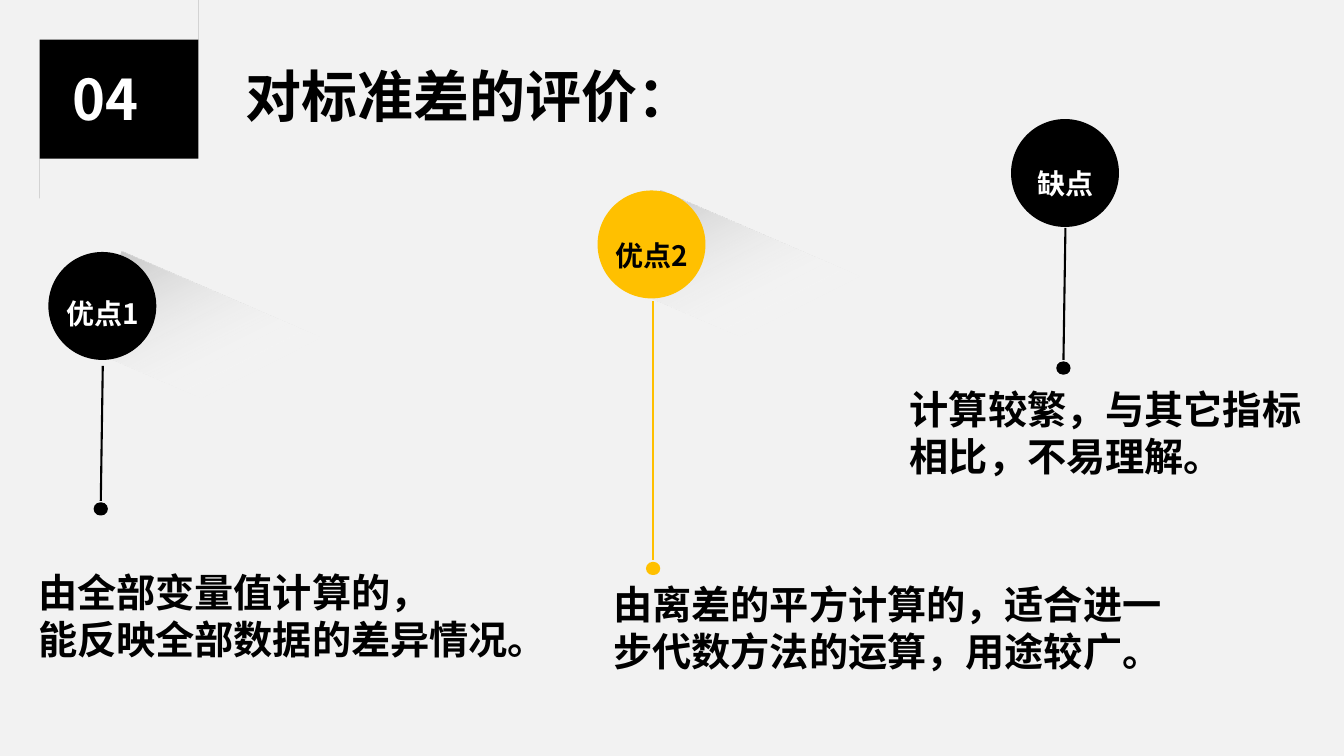
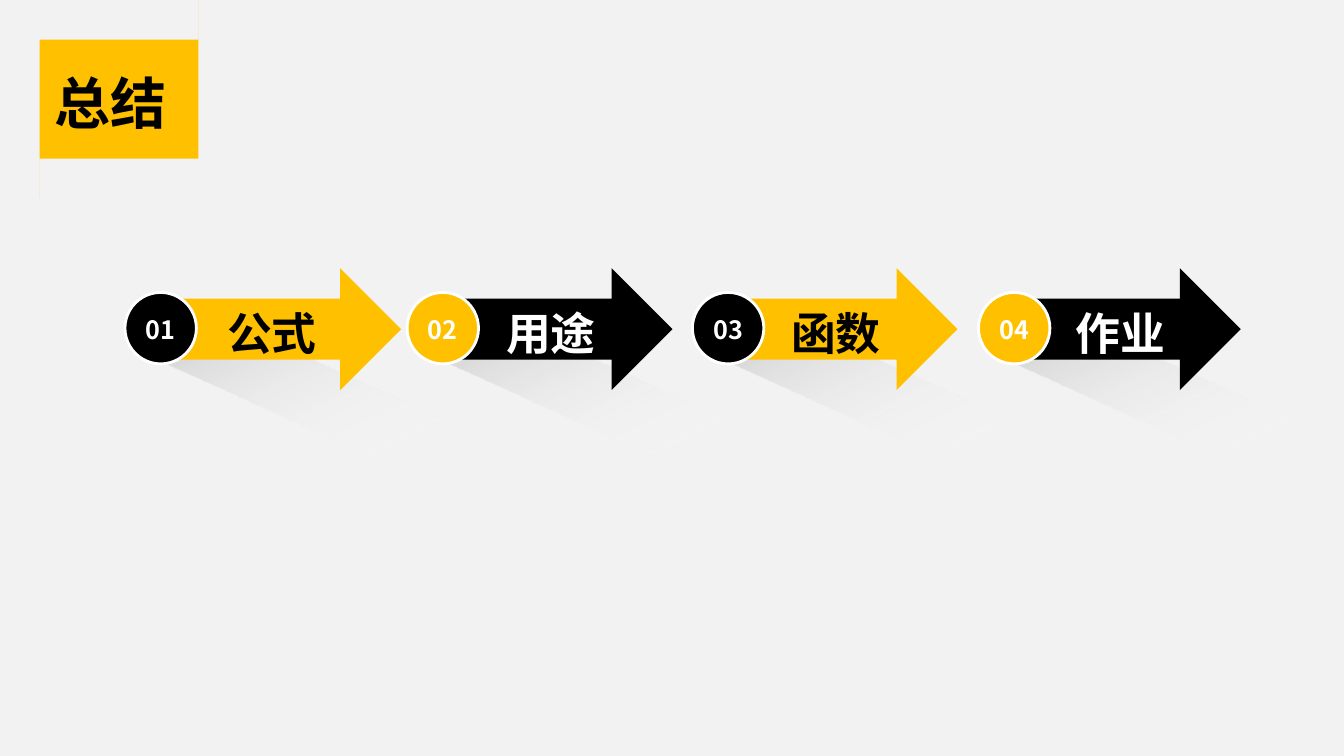
"""Build two slides: the evaluation of the standard deviation, and the summary."""
import dataclasses

import lxml.etree
import pptx
import pptx.dml.color
import pptx.enum.shapes
import pptx.enum.text
import pptx.oxml.ns
import pptx.util

Cm = pptx.util.Cm
Pt = pptx.util.Pt
RGBColor = pptx.dml.color.RGBColor
SHAPE = pptx.enum.shapes.MSO_SHAPE
ANCHOR = pptx.enum.text.MSO_ANCHOR
ALIGN = pptx.enum.text.PP_ALIGN
qn = pptx.oxml.ns.qn

BLACK = RGBColor(0x00, 0x00, 0x00)
WHITE = RGBColor(0xFF, 0xFF, 0xFF)
AMBER = RGBColor(0xFF, 0xC0, 0x00)
PAPER = RGBColor(0xF2, 0xF2, 0xF2)
SHADE = RGBColor(0xBF, 0xBF, 0xBF)

FONT = "Noto Sans CJK JP"
FONT_SC = "Noto Sans CJK SC"
TEXT_INSETS = (0.25, 0.22, 0.25, 0.13)
NO_INSETS = (0, 0, 0, 0)

LEAF_START = (5.03, 0.30)
LEAF_CURVES = [
    ((4.83, 0.53), (4.55, 0.71), (4.11, 0.74)),
    ((3.43, 0.74), (2.74, 0.74), (2.06, 0.74)),
    ((1.50, 0.81), (0.71, 1.50), (0.71, 2.26)),
    ((0.71, 3.15), (0.71, 4.01), (0.71, 4.90)),
    ((0.89, 4.60), (1.17, 4.39), (1.60, 4.34)),
    ((2.24, 4.34), (2.84, 4.34), (3.45, 4.34)),
    ((4.17, 4.29), (4.72, 3.94), (5.03, 2.97)),
]
CURVE_STEPS = 12


@dataclasses.dataclass
class Pin:
    """One evaluated point: a round head, a stem with a dot, and a statement."""
    label: str
    color: RGBColor
    label_color: RGBColor
    head: tuple
    label_top: float
    stem: tuple
    statement: list
    statement_box: tuple
    shadow_offset: float = None


PINS = [
    Pin("优点1", BLACK, WHITE, (1.22, 6.35), 6.88, (2.59, 9.22, 2.54, 12.62),
        ["由全部变量值计算的，", "能反映全部数据的差异情况。"],
        (0.71, 14.1, 14.35, 2.64), 1.02),
    Pin("优点2", AMBER, BLACK, (15.06, 4.8), 5.43, (16.46, 7.59, 16.46, 14.12),
        ["由离差的平方计算的，适合进一步代数方法的运算，用途较广。"],
        (15.21, 14.4, 14.45, 2.64), 0.76),
    Pin("缺点", BLACK, WHITE, (25.48, 3), 3.6, (26.85, 5.74, 26.8, 9.07),
        ["计算较繁，与其它指标相比，不易理解。"],
        (22.68, 9.5, 10.52, 2.64)),
]

STEPS = [
    ("01", "公式", 3.58, 6.53, 3.15),
    ("02", "用途", 10.8, 6.15, 10.26),
    ("03", "函数", 17.98, 6.15, 17.45),
    ("04", "作业", 25.17, 6.1, 24.66),
]


def write(frame, lines, size, color, font=FONT, insets=TEXT_INSETS, wrap=True,
          anchor=ANCHOR.TOP, align=ALIGN.LEFT, spacing=1.2):
    """Fill a text frame with bold paragraphs at a fixed line pitch."""
    frame.word_wrap = wrap
    frame.vertical_anchor = anchor
    (frame.margin_left, frame.margin_top,
     frame.margin_right, frame.margin_bottom) = map(Cm, insets)
    for index, line in enumerate(lines):
        paragraph = frame.add_paragraph() if index else frame.paragraphs[0]
        paragraph.alignment = align
        paragraph.line_spacing = Pt(size * spacing)
        run = paragraph.add_run()
        run.text = line
        run.font.name = font
        run.font.size = Pt(size)
        run.font.bold = True
        run.font.color.rgb = color
        east_asian = lxml.etree.SubElement(run.font._element, qn("a:ea"))
        east_asian.set("typeface", font)


def write_centred(frame, line, size, color, font=FONT, insets=NO_INSETS, spacing=1.34):
    """Put one centred label in a frame."""
    write(frame, [line], size, color, font, insets, True,
          ANCHOR.MIDDLE, ALIGN.CENTER, spacing)


def add_text_frame(slide, box):
    """Add a text box and return its frame."""
    return slide.shapes.add_textbox(*map(Cm, box)).text_frame


def add_solid(slide, preset, box, color):
    """Add a flat preset shape without outline."""
    solid = slide.shapes.add_shape(preset, *map(Cm, box))
    solid.shadow.inherit = False
    solid.fill.solid()
    solid.fill.fore_color.rgb = color
    solid.line.fill.background()
    return solid


def add_long_shadow(slide, box, rotation):
    """Add a tilted strip that fades from grey to clear."""
    strip = add_solid(slide, SHAPE.RECTANGLE, box, SHADE)
    strip.rotation = rotation
    strip.fill.gradient()
    strip.fill.gradient_angle = 320
    near, far = strip.fill.gradient_stops
    near.color.rgb, near.position = SHADE, 0
    far.color.rgb, far.position = WHITE, 0.54
    clear = strip._element.xpath(".//a:gs/a:srgbClr")[-1]
    lxml.etree.SubElement(clear, qn("a:alpha")).set("val", "0")


def add_stem(slide, ends, color):
    """Add a thin straight line."""
    stem = slide.shapes.add_connector(
        pptx.enum.shapes.MSO_CONNECTOR.STRAIGHT, *map(Cm, ends))
    stem.line.color.rgb = color
    stem.line.width = Pt(1.5)
    lxml.etree.SubElement(stem._element.spPr, qn("a:effectLst"))


def curve_points(start, first, second, end):
    """Return points along a cubic curve, without its start."""
    points = []
    for step in range(1, CURVE_STEPS + 1):
        t = step / CURVE_STEPS
        weights = ((1 - t) ** 3, 3 * t * (1 - t) ** 2, 3 * t * t * (1 - t), t ** 3)
        points.append(tuple(
            sum(w * p[axis] for w, p in zip(weights, (start, first, second, end)))
            for axis in (0, 1)))
    return points


def add_leaf(slide, color):
    """Add the leaf-shaped corner mark."""
    outline = [LEAF_START]
    for curve in LEAF_CURVES:
        outline += curve_points(outline[-1], *curve)
    builder = slide.shapes.build_freeform(*LEAF_START, scale=Cm(1))
    builder.add_line_segments(outline[1:], close=True)
    leaf = builder.convert_to_shape()
    leaf.shadow.inherit = False
    leaf.fill.solid()
    leaf.fill.fore_color.rgb = color
    leaf.line.fill.background()


def add_pin(slide, pin):
    """Add one evaluated point."""
    left, top = pin.head
    if pin.shadow_offset is not None:
        add_long_shadow(slide, (left + pin.shadow_offset, top + 1.46, 7.9, 2.59), 23.3)
    add_solid(slide, SHAPE.OVAL, (left, top, 2.72, 2.72), pin.color)
    write_centred(add_text_frame(slide, (left + 0.43, pin.label_top, 1.87, 1.78)),
                  pin.label, 20, pin.label_color, spacing=1.54)
    add_stem(slide, pin.stem, pin.color)
    foot_x, foot_y = pin.stem[2:]
    dot = add_solid(slide, SHAPE.ROUNDED_RECTANGLE,
                    (foot_x - 0.18, foot_y + 0.04, 0.36, 0.33), pin.color)
    dot.adjustments[0] = 0.5
    write(add_text_frame(slide, pin.statement_box), pin.statement, 28, BLACK)


def add_step(slide, number, topic, arrow_left, arrow_width, badge_left, colors):
    """Add a labelled arrow with its numbered badge."""
    arrow_color, topic_color, badge_color = colors
    arrow = add_solid(slide, SHAPE.RIGHT_ARROW,
                      (arrow_left, 6.76, arrow_width, 3.07), arrow_color)
    write_centred(arrow.text_frame, topic, 32, topic_color, insets=(1.5, 0, 0.71, 0))
    badge = add_solid(slide, SHAPE.OVAL, (badge_left, 7.37, 1.8, 1.8), badge_color)
    badge.line.color.rgb = WHITE
    badge.line.width = Pt(2)
    write_centred(badge.text_frame, number, 18, WHITE, FONT_SC)


def add_slide(deck, leaf_color):
    """Add a blank slide with the shared background and corner mark."""
    slide = deck.slides.add_slide(deck.slide_layouts[6])
    slide.background.fill.solid()
    slide.background.fill.fore_color.rgb = PAPER
    add_leaf(slide, leaf_color)
    return slide


def build_evaluation(deck):
    """Build the slide on merits and drawbacks."""
    slide = add_slide(deck, BLACK)
    write(add_text_frame(slide, (1.57, 1.4, 2.57, 1.96)), ["04"], 40, WHITE, wrap=False)
    write(add_text_frame(slide, (5.94, 1.32, 11.68, 1.96)), ["对标准差的评价："], 40, BLACK)
    for pin in PINS:
        add_pin(slide, pin)


def build_summary(deck):
    """Build the slide with the four steps."""
    slide = add_slide(deck, AMBER)
    write(add_text_frame(slide, (1.12, 1.5, 3.91, 1.96)), ["总结"], 40, BLACK, FONT_SC)
    for index in range(len(STEPS)):
        add_long_shadow(slide, (3.3 + index * 7.13, 10.19, 13.79, 1.6), 24.2)
    for index, step in enumerate(STEPS):
        colors = (BLACK, WHITE, AMBER) if index % 2 else (AMBER, BLACK, BLACK)
        add_step(slide, *step, colors)


def main():
    """Build and save the deck."""
    deck = pptx.Presentation()
    deck.slide_width, deck.slide_height = Cm(33.87), Cm(19.05)
    build_evaluation(deck)
    build_summary(deck)
    deck.save("out.pptx")


if __name__ == "__main__":
    main()
